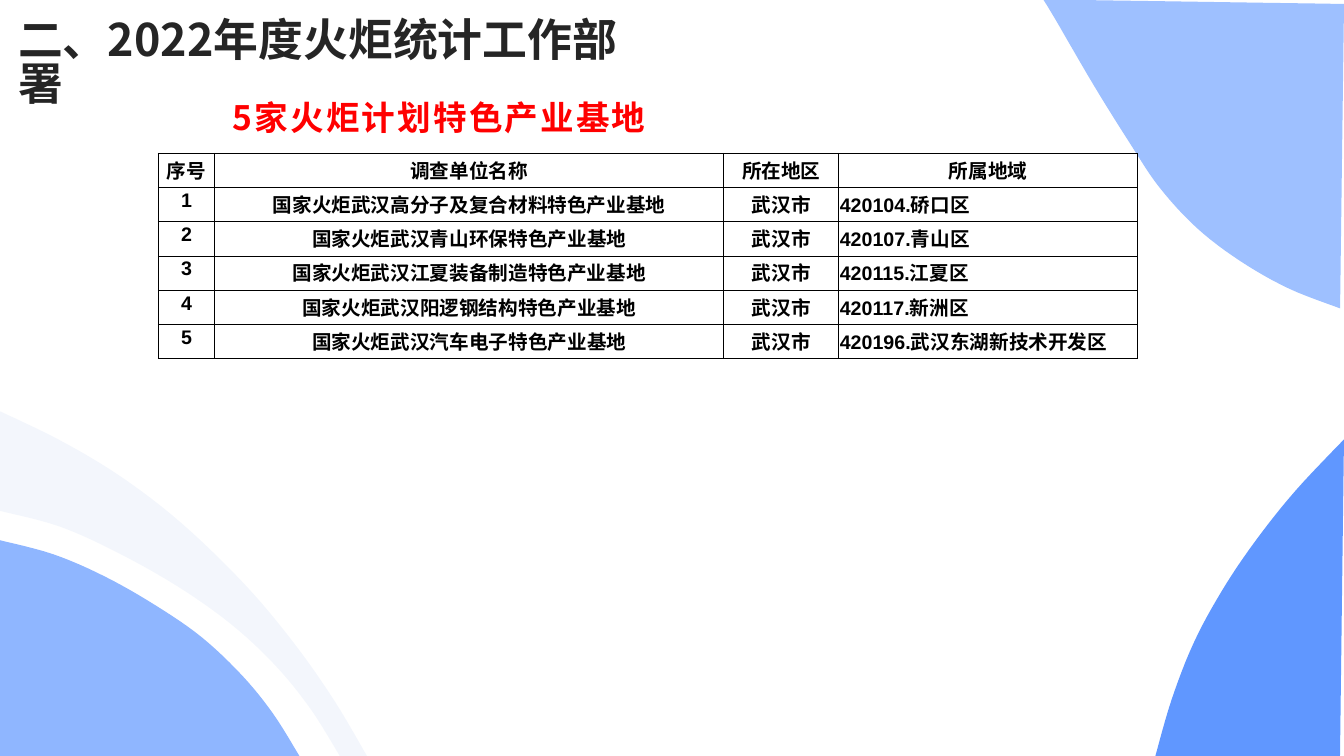
"""Build the slide listing the five Torch Programme industry bases."""
from dataclasses import dataclass

from lxml.etree import SubElement
from pptx import Presentation
from pptx.dml.color import RGBColor
from pptx.enum.text import MSO_ANCHOR as Anchor
from pptx.enum.text import MSO_AUTO_SIZE as AutoSize
from pptx.enum.text import PP_ALIGN as Align
from pptx.oxml.ns import qn
from pptx.util import Inches, Pt


@dataclass(frozen=True)
class Theme:
    """Colours, fonts and type sizes of the slide."""
    title_color: str = "252525"
    accent: str = "FF0000"
    ink: str = "000000"
    paper: str = "FFFFFF"
    lower_left: str = "8FB6FF"
    band: str = "386FD5"
    upper_right: str = "9EC0FF"
    lower_right: str = "6097FF"
    font: str = "Noto Sans CJK SC"
    number_font: str = "Arial"
    title_size: float = 32
    subtitle_size: float = 24
    table_size: float = 14
    border: float = 0.75


@dataclass(frozen=True)
class Box:
    """A region of the slide in inches."""
    left: float
    top: float
    width: float
    height: float

    def lengths(self):
        """Return the region as slide lengths."""
        return [Inches(value) for value in (self.left, self.top, self.width, self.height)]

    def point(self, across, down):
        """Return the slide point at the given percentages of the region."""
        return (Inches(self.left + self.width * across / 100),
                Inches(self.top + self.height * down / 100))


THEME = Theme()
SLIDE = Box(0, 0, 13.33, 7.5)

LOWER_LEFT = [
    [(100, 100), (0, 100)],
    [(0, 0), (17.8, 6.5), (35, 16.8), (52.2, 30.4), (67.3, 44.9), (80.8, 62.6),
     (91.2, 80.4), (100, 100)],
]
BAND = [
    [(0, 0), (16.5, 8.5), (33, 19), (49.5, 32.5), (66.5, 50), (79.7, 66.7),
     (90.9, 83.6), (100, 100)],
    [(92.6, 100), (84.6, 86.3), (75, 73.7), (62.9, 61.7), (48.1, 50.6),
     (31.3, 40.6), (15.9, 33.3), (0, 28.9)],
]
UPPER_RIGHT = [
    [(11, 0), (100, 1.3)],
    [(98.7, 100), (81.5, 93.5), (65.4, 84.6), (51, 73.9), (38.6, 60.8),
     (28.9, 46.7), (16.8, 27.8), (3.7, 5.9), (0, 0)],
]
LOWER_RIGHT = [
    [(97.9, 100)],
    [(0, 100), (8.6, 82.2), (20.3, 64.3), (35.3, 47.8), (52.9, 32.2),
     (74.3, 16.2), (100, 0)],
]

COLUMNS = [0.56, 5.05, 1.14, 2.96]
HEADINGS = ["序号", "调查单位名称", "所在地区", "所属地域"]
BASES = [
    ("高分子及复合材料", "420104.硚口区"),
    ("青山环保", "420107.青山区"),
    ("江夏装备制造", "420115.江夏区"),
    ("阳逻钢结构", "420117.新洲区"),
    ("汽车电子", "420196.武汉东湖新技术开发区"),
]


def smooth(knots, steps=6):
    """Return points on a Catmull-Rom curve through the knots."""
    padded = [knots[0], *knots, knots[-1]]
    points = [knots[0]]
    for before, start, end, after in zip(padded, padded[1:], padded[2:], padded[3:]):
        for step in range(1, steps + 1):
            t = step / steps
            points.append(tuple(
                b + 0.5 * t * (c - a + t * (2 * a - 5 * b + 4 * c - d
                                            + t * (3 * (b - c) + d - a)))
                for a, b, c, d in zip(before, start, end, after)))
    return points


def add_wave(slide, box, edges, color, opacity=None):
    """Draw a filled outline whose edges are percentages of the box."""
    points = [box.point(*point) for edge in edges for point in smooth(edge)]
    builder = slide.shapes.build_freeform(*points[0], scale=1.0)
    builder.add_line_segments(points[1:], close=True)
    shape = builder.convert_to_shape()
    shape.shadow.inherit = False
    shape.fill.solid()
    shape.fill.fore_color.rgb = RGBColor.from_string(color)
    shape.line.fill.background()
    if opacity is not None:
        color_element = next(shape.element.iter(qn("a:srgbClr")))
        SubElement(color_element, qn("a:alpha")).set("val", str(opacity * 1000))


def write_text(frame, text, size, color=THEME.ink, font=THEME.font, align=Align.LEFT,
               before=1.0, line_spacing=None, tracking=0):
    """Fill a text frame with one bold paragraph."""
    paragraph = frame.paragraphs[0]
    paragraph.alignment = align
    paragraph.space_before = Pt(before)
    if line_spacing:
        paragraph.line_spacing = line_spacing
    run = paragraph.add_run()
    run.text = text
    run.font.size = Pt(size)
    run.font.bold = True
    run.font.name = font
    run.font.color.rgb = RGBColor.from_string(color)
    properties = run.font._element
    SubElement(properties, qn("a:ea")).set("typeface", THEME.font)
    if tracking:
        properties.set("spc", str(round(tracking * 100)))


def set_margins(target, left=0.0, top=0.0):
    """Set the inner margins of a text frame or cell."""
    target.margin_left, target.margin_top = Inches(left), Inches(top)
    target.margin_right = target.margin_bottom = 0


def add_heading(slide, box, text, top_margin=0.01, **text_format):
    """Place a heading in a wrapping text box."""
    frame = slide.shapes.add_textbox(*box.lengths()).text_frame
    frame.word_wrap = True
    frame.auto_size = AutoSize.SHAPE_TO_FIT_TEXT
    frame.vertical_anchor = Anchor.TOP
    set_margins(frame, left=0.01, top=top_margin)
    write_text(frame, text, **text_format)


def add_borders(cell):
    """Draw a thin line on every side of a cell."""
    properties = cell._tc.get_or_add_tcPr()
    for position, side in enumerate(("a:lnL", "a:lnR", "a:lnT", "a:lnB")):
        line = properties.makeelement(qn(side), {"w": str(Pt(THEME.border))})
        fill = SubElement(line, qn("a:solidFill"))
        SubElement(fill, qn("a:srgbClr")).set("val", THEME.ink)
        properties.insert(position, line)


def add_base_table(slide, box):
    """Place the table of industry bases."""
    rows = [HEADINGS] + [
        [str(number), f"国家火炬武汉{name}特色产业基地", "武汉市", district]
        for number, (name, district) in enumerate(BASES, 1)]
    table = slide.shapes.add_table(len(rows), len(COLUMNS), *box.lengths()).table
    table.first_row = table.horz_banding = False
    for column, width in zip(table.columns, COLUMNS):
        column.width = Inches(width)
    for row_index, values in enumerate(rows):
        table.rows[row_index].height = Inches(box.height / len(rows))
        for column_index, value in enumerate(values):
            cell = table.cell(row_index, column_index)
            is_district = row_index > 0 and column_index == len(COLUMNS) - 1
            set_margins(cell, left=0.01 if is_district else 0, top=0.02)
            cell.vertical_anchor = Anchor.TOP
            cell.fill.solid()
            cell.fill.fore_color.rgb = RGBColor.from_string(THEME.paper)
            add_borders(cell)
            write_text(cell.text_frame, value, THEME.table_size, before=1.7,
                       font=THEME.number_font if row_index else THEME.font,
                       align=Align.LEFT if is_district else Align.CENTER)


def add_background(slide, page):
    """Place the waves against the edges of the page."""
    right, bottom = page.left + page.width, page.top + page.height
    add_wave(slide, Box(page.left, bottom - 2.14, 2.97, 2.14), LOWER_LEFT, THEME.lower_left)
    add_wave(slide, Box(page.left, bottom - 3.42, 3.64, 3.42), BAND, THEME.band, opacity=6)
    add_wave(slide, Box(right - 2.98, page.top, 2.98, 3.06), UPPER_RIGHT, THEME.upper_right)
    add_wave(slide, Box(right - 1.87, bottom - 3.14, 1.87, 3.14), LOWER_RIGHT,
             THEME.lower_right)


def main():
    """Build and save the presentation."""
    presentation = Presentation()
    presentation.slide_width, presentation.slide_height = SLIDE.lengths()[2:]
    slide = presentation.slides.add_slide(presentation.slide_layouts[6])
    add_background(slide, SLIDE)
    add_heading(slide, Box(2.3, 1, 4.29, 0.42), "5家火炬计划特色产业基地",
                size=THEME.subtitle_size, color=THEME.accent, line_spacing=0.88, tracking=1.5)
    add_base_table(slide, Box(1.57, 1.52, sum(COLUMNS), 2.04))
    add_heading(slide, Box(0.17, 0.17, 6.28, 0.55), "二、2022年度火炬统计工作部署",
                top_margin=0.04, size=THEME.title_size, color=THEME.title_color,
                line_spacing=0.82)
    presentation.save("out.pptx")


if __name__ == "__main__":
    main()
